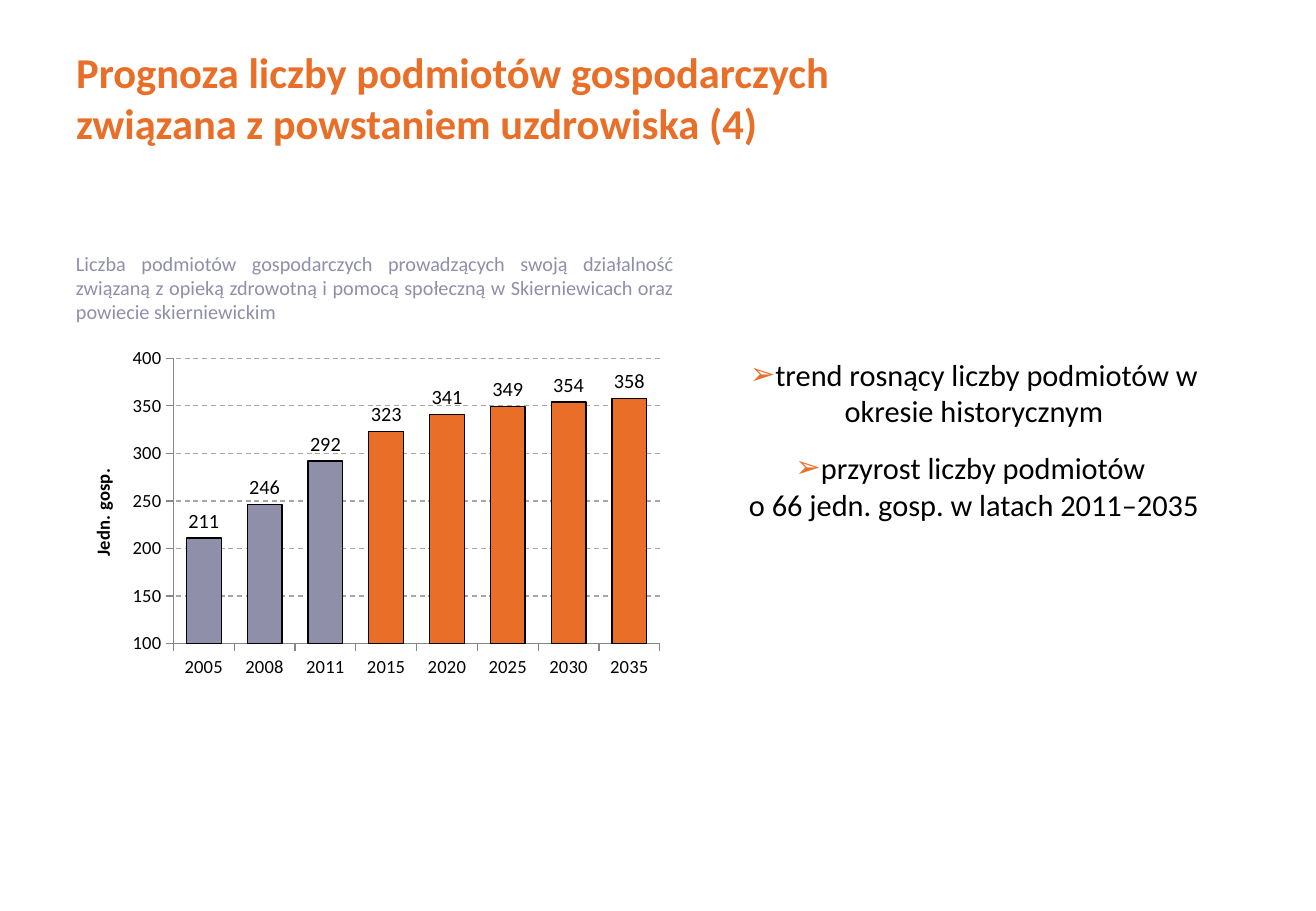
import dataclasses

import lxml.etree
import pptx
import pptx.chart.data
import pptx.dml.color
import pptx.enum.chart
import pptx.enum.dml
import pptx.enum.text
import pptx.oxml
import pptx.oxml.ns
import pptx.util

EMU_PER_PX = 7526


def color(code):
    return pptx.dml.color.RGBColor.from_string(code)


@dataclasses.dataclass(frozen=True)
class Theme:
    font: str = "Calibri"
    orange: str = "E96F28"
    lavender: str = "8F8FAA"
    black: str = "000000"
    axis: str = "868686"
    grid: str = "A6A6A6"
    title_size: float = 25.2
    list_size: float = 18
    caption_size: float = 12
    label_size: float = 12
    axis_size: float = 11
    chart_size: float = 10


THEME = Theme()
Align = pptx.enum.text.PP_ALIGN

TITLE = "Prognoza liczby podmiotów gospodarczych \vzwiązana z powstaniem uzdrowiska (4)"
CAPTION = (
    "Liczba podmiotów gospodarczych prowadzących swoją działalność związaną z opieką "
    "zdrowotną i pomocą społeczną w Skierniewicach oraz powiecie skierniewickim"
)
FINDINGS = [
    "trend rosnący liczby podmiotów w okresie historycznym",
    "przyrost liczby podmiotów \vo 66 jedn. gosp. w latach 2011–2035",
]
COMPANIES = {
    "2005": 211, "2008": 246, "2011": 292, "2015": 323,
    "2020": 341, "2025": 349, "2030": 354, "2035": 358,
}
LAST_HISTORIC_YEAR = "2011"


def emu(*lengths):
    return [pptx.util.Emu(length * EMU_PER_PX) for length in lengths]


def style_font(font, size, code, bold=False):
    font.name = THEME.font
    font.size = pptx.util.Pt(size)
    font.bold = bold
    font.color.rgb = color(code)


def style_line(line, code):
    line.color.rgb = color(code)
    line.width = pptx.util.Pt(0.75)


def style_para(para, align, size, code, bold=False):
    para.alignment = align
    for span in para.runs:
        style_font(span.font, size, code, bold)


def place(shape, box):
    shape.left, shape.top, shape.width, shape.height = emu(*box)


def add_title(page, box):
    title = page.shapes.title
    place(title, box)
    frame = title.text_frame
    frame.text = TITLE
    frame.auto_size = pptx.enum.text.MSO_AUTO_SIZE.NONE
    frame.vertical_anchor = pptx.enum.text.MSO_ANCHOR.MIDDLE
    style_para(frame.paragraphs[0], Align.LEFT, THEME.title_size, THEME.orange, bold=True)


def add_caption(page, box):
    frame = page.shapes.add_textbox(*emu(*box)).text_frame
    frame.word_wrap = True
    frame.text = CAPTION
    style_para(frame.paragraphs[0], Align.JUSTIFY, THEME.caption_size, THEME.lavender)


def add_arrow_bullet(para):
    properties = para._p.get_or_add_pPr()
    properties.set("marL", "0")
    properties.set("indent", "0")
    bullet_color = lxml.etree.SubElement(properties, pptx.oxml.ns.qn("a:buClr"))
    lxml.etree.SubElement(bullet_color, pptx.oxml.ns.qn("a:srgbClr"), val=THEME.orange)
    lxml.etree.SubElement(properties, pptx.oxml.ns.qn("a:buChar"), char="➢")


def add_findings(page, box):
    body = page.placeholders[1]
    place(body, box)
    frame = body.text_frame
    frame.auto_size = pptx.enum.text.MSO_AUTO_SIZE.NONE
    frame.text = "\n".join(FINDINGS)
    for para in frame.paragraphs:
        add_arrow_bullet(para)
        para.space_before = pptx.util.Pt(0)
        style_para(para, Align.CENTER, THEME.list_size, THEME.black)
    frame.paragraphs[0].space_after = pptx.util.Pt(12)


def set_plot_area(chart, left, top, width, height):
    """Fix the inner plot area, given as fractions of the chart."""
    plot_area = chart._chartSpace.chart.plotArea
    for layout in plot_area.findall(pptx.oxml.ns.qn("c:layout")):
        plot_area.remove(layout)
    plot_area.insert(0, pptx.oxml.parse_xml(
        f'<c:layout {pptx.oxml.ns.nsdecls("c")}><c:manualLayout>'
        '<c:layoutTarget val="inner"/><c:xMode val="edge"/><c:yMode val="edge"/>'
        f'<c:x val="{left}"/><c:y val="{top}"/><c:w val="{width}"/><c:h val="{height}"/>'
        '</c:manualLayout></c:layout>'
    ))


def style_axes(chart):
    for axis in (chart.category_axis, chart.value_axis):
        axis.major_tick_mark = pptx.enum.chart.XL_TICK_MARK.OUTSIDE
        style_line(axis.format.line, THEME.axis)
        style_font(axis.tick_labels.font, THEME.axis_size, THEME.black)
    values = chart.value_axis
    values.minimum_scale, values.maximum_scale, values.major_unit = 100, 400, 50
    values.has_major_gridlines = True
    grid = values.major_gridlines.format.line
    style_line(grid, THEME.grid)
    grid.dash_style = pptx.enum.dml.MSO_LINE.DASH
    heading = values.axis_title.text_frame
    heading.text = "Jedn. gosp."
    style_para(heading.paragraphs[0], Align.CENTER, THEME.axis_size, THEME.black, bold=True)


def style_columns(plot):
    plot.gap_width = 75
    plot.vary_by_categories = False
    plot.has_data_labels = True
    labels = plot.data_labels
    labels.show_value = True
    labels.number_format = "#,##0"
    labels.number_format_is_linked = False
    labels.position = pptx.enum.chart.XL_LABEL_POSITION.OUTSIDE_END
    style_font(labels.font, THEME.label_size, THEME.black)
    for index, year in enumerate(COMPANIES):
        column = plot.series[0].points[index].format
        column.fill.solid()
        historic = year <= LAST_HISTORIC_YEAR
        column.fill.fore_color.rgb = color(THEME.lavender if historic else THEME.orange)
        style_line(column.line, THEME.black)


def add_company_chart(page, box):
    data = pptx.chart.data.CategoryChartData()
    data.categories = list(COMPANIES)
    data.add_series("Series 1", list(COMPANIES.values()))
    kind = pptx.enum.chart.XL_CHART_TYPE.COLUMN_CLUSTERED
    chart = page.shapes.add_chart(kind, *emu(*box), data).chart
    chart.has_legend = False
    chart.has_title = False
    style_font(chart.font, THEME.chart_size, THEME.black)
    set_plot_area(chart, left=0.18, top=0.05, width=0.8, height=0.83)
    style_axes(chart)
    style_columns(chart.plots[0])


def main():
    deck = pptx.Presentation()
    deck.slide_width, deck.slide_height = emu(1316, 911)
    page = deck.slides.add_slide(deck.slide_layouts[1])
    add_title(page, (64, 44, 1185, 106))
    add_company_chart(page, (64, 341, 608, 344))
    add_caption(page, (64, 245, 622, 86))
    add_findings(page, (716, 350, 516, 216))
    deck.save("out.pptx")


if __name__ == "__main__":
    main()
